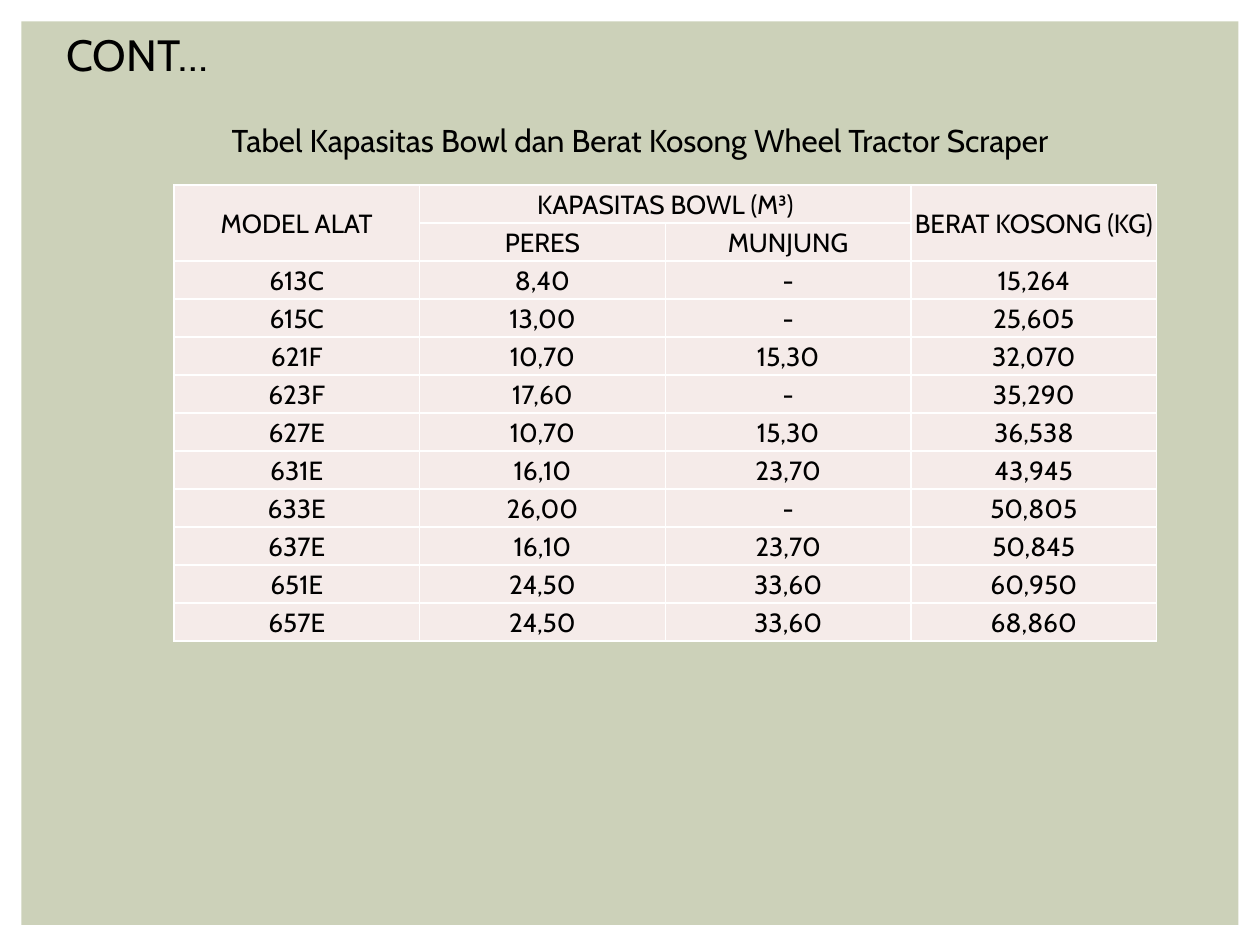
from lxml import etree
from pptx import Presentation
from pptx import util as u
from pptx.dml.color import RGBColor
from pptx.enum import shapes, text
from pptx.oxml import ns

BLACK = RGBColor(0x00, 0x00, 0x00)
WHITE = RGBColor(0xFF, 0xFF, 0xFF)
SAGE = RGBColor(0xCC, 0xD1, 0xB9)
BLUSH = RGBColor(0xF5, 0xEB, 0xE9)
FONT = "Cabin"

HEADS = [
    ["MODEL ALAT", "KAPASITAS BOWL (M³)", "", "BERAT KOSONG (KG)"],
    ["", "PERES", "MUNJUNG", ""],
]
MODELS = [
    ["613C", "8,40", "-", "15,264"],
    ["615C", "13,00", "-", "25,605"],
    ["621F", "10,70", "15,30", "32,070"],
    ["623F", "17,60", "-", "35,290"],
    ["627E", "10,70", "15,30", "36,538"],
    ["631E", "16,10", "23,70", "43,945"],
    ["633E", "26,00", "-", "50,805"],
    ["637E", "16,10", "23,70", "50,845"],
    ["651E", "24,50", "33,60", "60,950"],
    ["657E", "24,50", "33,60", "68,860"],
]
# First and last cell of each merged heading
MERGES = [((0, 0), (1, 0)), ((0, 1), (0, 2)), ((0, 3), (1, 3))]


def box(left, top, width, height):
    return [u.Inches(n) for n in (left, top, width, height)]


def write(frame, words, size, align):
    frame.text = words
    para = frame.paragraphs[0]
    para.alignment = align
    for run in para.runs:
        run.font.size = u.Pt(size)
        run.font.name = FONT
        run.font.color.rgb = BLACK


def add_panel(slide):
    panel = slide.shapes.add_shape(
        shapes.MSO_SHAPE.RECTANGLE, *box(0.17, 0.17, 9.66, 7.17))
    panel.shadow.inherit = False
    panel.fill.solid()
    panel.fill.fore_color.rgb = SAGE
    panel.line.fill.background()


def add_label(slide, place, words, size, align):
    frame = slide.shapes.add_textbox(*place).text_frame
    frame.word_wrap = True
    frame.auto_size = text.MSO_AUTO_SIZE.SHAPE_TO_FIT_TEXT
    write(frame, words, size, align)


def set_edges(cell):
    props = cell._tc.get_or_add_tcPr()
    for spot, side in enumerate(("lnL", "lnR", "lnT", "lnB")):
        edge = etree.Element(ns.qn("a:" + side), w=str(u.Pt(1)))
        fill = etree.SubElement(edge, ns.qn("a:solidFill"))
        etree.SubElement(fill, ns.qn("a:srgbClr"), val=str(WHITE))
        props.insert(spot, edge)  # edges come before the fill


def style_cell(cell, words):
    cell.margin_left = cell.margin_right = cell.margin_top = u.Inches(0.01)
    cell.margin_bottom = 0
    cell.vertical_anchor = text.MSO_ANCHOR.MIDDLE
    cell.fill.solid()
    cell.fill.fore_color.rgb = BLUSH
    set_edges(cell)
    write(cell.text_frame, words, 15, text.PP_ALIGN.CENTER)


def add_grid(slide):
    rows = HEADS + MODELS
    grid = slide.shapes.add_table(
        len(rows), len(rows[0]), *box(1.38, 1.47, 7.8, 3.62)).table
    for r, row in enumerate(rows):
        for c, words in enumerate(row):
            style_cell(grid.cell(r, c), words)
    for first, last in MERGES:
        grid.cell(*first).merge(grid.cell(*last))


def main():
    deck = Presentation()
    deck.slide_width, deck.slide_height = u.Inches(10), u.Inches(7.5)
    slide = deck.slides.add_slide(deck.slide_layouts[6])
    slide.background.fill.solid()
    slide.background.fill.fore_color.rgb = WHITE

    # Backdrop and table
    add_panel(slide)
    add_grid(slide)

    # Caption and heading
    add_label(slide, box(1.42, 0.91, 7.32, 0.4),
              "Tabel Kapasitas Bowl dan Berat Kosong Wheel Tractor Scraper",
              18, text.PP_ALIGN.CENTER)
    add_label(slide, box(0.43, 0.17, 1.34, 0.52), "CONT…", 25,
              text.PP_ALIGN.JUSTIFY)
    deck.save("out.pptx")


if __name__ == "__main__":
    main()
